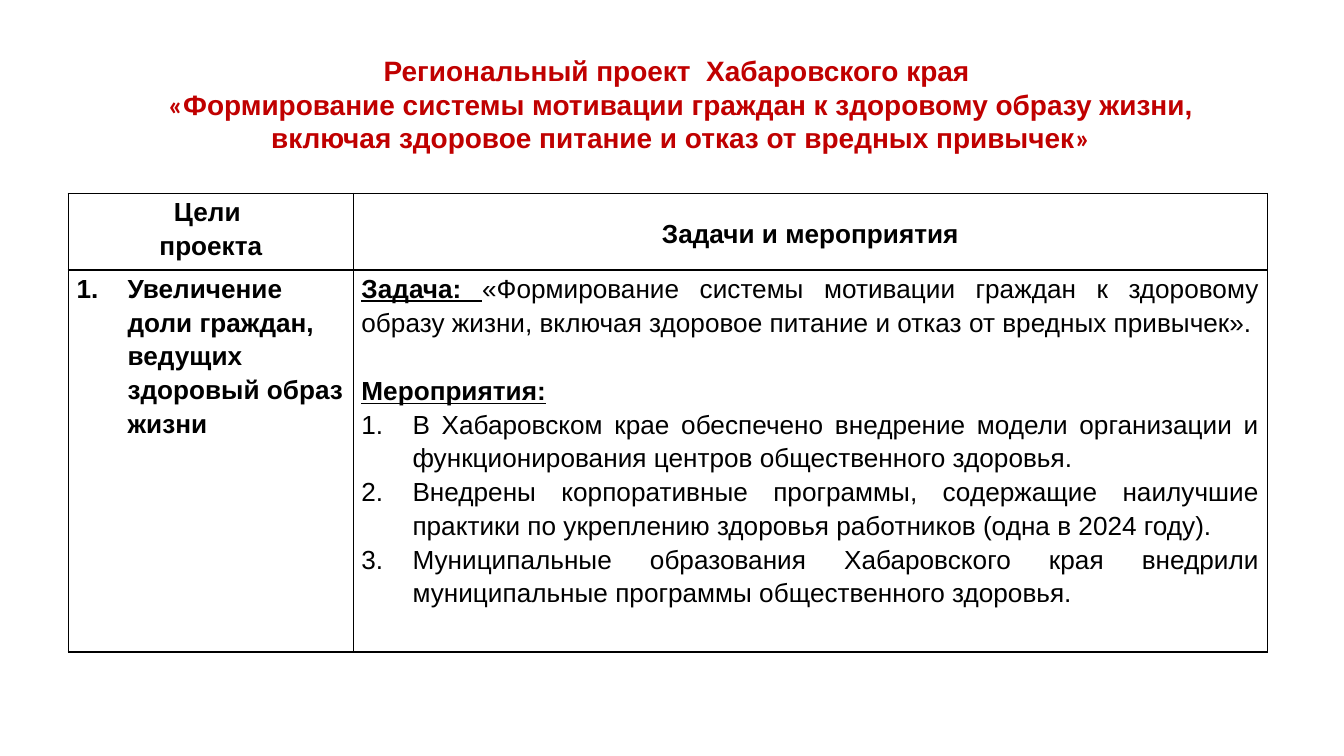
from lxml import etree
from pptx import Presentation, util as u
from pptx.dml.color import RGBColor
from pptx.enum import text
from pptx.oxml.ns import qn

COLORS = {"title": "C00000", "ink": "000000", "paper": "FFFFFF"}
CENTER, JUSTIFY, LEFT = text.PP_ALIGN.CENTER, text.PP_ALIGN.JUSTIFY, text.PP_ALIGN.LEFT
TOP, MIDDLE = text.MSO_ANCHOR.TOP, text.MSO_ANCHOR.MIDDLE


class SlideBuilder:
    """Holds the text style and the current slide."""
    font = "Arial"
    body_size = 14
    title_size = 15

    def __init__(self, slide):
        self.slide = slide

    def color(self, name):
        return RGBColor.from_string(COLORS[name])

    def style(self, span, size, color, bold=False, underline=False, font=None):
        span.font.name = font or self.font
        span.font.size = u.Pt(size)
        span.font.color.rgb = self.color(color)
        span.font.bold = bold
        span.font.underline = underline

    def number(self, para):
        """Hanging indent with automatic 1. 2. 3. numbering."""
        props = para._p.get_or_add_pPr()
        props.set("marL", str(u.Inches(0.38)))
        props.set("indent", str(u.Inches(-0.38)))
        etree.SubElement(props, qn("a:buFont"), typeface="+mj-lt")
        etree.SubElement(props, qn("a:buAutoNum"), type="arabicPeriod")

    def title(self, left, top, width, height, lines):
        """Each line is a list of (words, font) spans."""
        box = self.slide.shapes.add_textbox(*map(u.Inches, (left, top, width, height)))
        frame = box.text_frame
        frame.word_wrap = True
        frame.auto_size = text.MSO_AUTO_SIZE.SHAPE_TO_FIT_TEXT
        frame.vertical_anchor = MIDDLE
        frame.margin_left = frame.margin_right = u.Inches(0.07)
        frame.margin_top = frame.margin_bottom = u.Inches(0.04)
        for index, line in enumerate(lines):
            para = frame.add_paragraph() if index else frame.paragraphs[0]
            para.alignment = CENTER
            for words, font in line:
                span = para.add_run()
                span.text = words
                self.style(span, self.title_size, "title", bold=True, font=font)

    def table(self, left, top, widths, heights):
        frame = self.slide.shapes.add_table(
            len(heights), len(widths),
            *map(u.Inches, (left, top, sum(widths), sum(heights))))
        table = frame.table
        table.first_row = table.horz_banding = False
        for column, width in zip(table.columns, widths):
            column.width = u.Inches(width)
        for row, height in zip(table.rows, heights):
            row.height = u.Inches(height)
        for cell in table.iter_cells():
            self.border(cell)
            cell.fill.solid()
            cell.fill.fore_color.rgb = self.color("paper")
        return table

    def border(self, cell):
        props = cell._tc.get_or_add_tcPr()
        for side in ("lnL", "lnR", "lnT", "lnB"):
            line = etree.SubElement(props, qn(f"a:{side}"), w=str(u.Pt(1)))
            fill = etree.SubElement(line, qn("a:solidFill"))
            etree.SubElement(fill, qn("a:srgbClr"), val=COLORS["ink"])

    def fill_cell(self, cell, paras, align, anchor=TOP):
        """Each paragraph is (spans, numbered, space before); a span is (words, bold, underline)."""
        cell.margin_left = cell.margin_right = u.Inches(0.06)
        cell.margin_top = cell.margin_bottom = 0
        cell.vertical_anchor = anchor
        frame = cell.text_frame
        for index, (spans, numbered, before) in enumerate(paras):
            para = frame.add_paragraph() if index else frame.paragraphs[0]
            para.alignment = align
            para.line_spacing = 1.15
            if before:
                para.space_before = u.Pt(before)
            if numbered:
                self.number(para)
            for words, bold, underline in spans:
                span = para.add_run()
                span.text = words
                self.style(span, self.body_size, "ink", bold, underline)


def bold(words, numbered=False):
    return [(words, True, False)], numbered, 0


def main():
    # Widescreen page, 16:9
    deck = Presentation()
    deck.slide_width = u.Inches(10)
    deck.slide_height = deck.slide_width * 9 // 16
    page = SlideBuilder(deck.slides.add_slide(deck.slide_layouts[6]))

    # Goals and activities
    table = page.table(0.51, 1.44, widths=(2.12, 6.8), heights=(0.57, 2.84))
    page.fill_cell(table.cell(0, 0), [bold("Цели "), bold("проекта")], CENTER)
    page.fill_cell(table.cell(0, 1), [bold("Задачи и мероприятия")], CENTER, MIDDLE)
    page.fill_cell(table.cell(1, 0), [
        bold("Увеличение доли граждан, ведущих здоровый образ жизни", numbered=True)], LEFT)

    task = [("Задача: ", True, True),
            ("«Формирование системы мотивации граждан к здоровому образу жизни, "
             "включая здоровое питание и отказ от вредных привычек».", False, False)]
    activities = (
        "В Хабаровском крае обеспечено внедрение модели организации и "
        "функционирования центров общественного здоровья.",
        "Внедрены корпоративные программы, содержащие наилучшие практики "
        "по укреплению здоровья работников (одна в 2024 году).",
        "Муниципальные образования Хабаровского края внедрили "
        "муниципальные программы общественного здоровья.",
    )
    page.fill_cell(table.cell(1, 1), [
        (task, False, 0),
        ([("Мероприятия:", True, True)], False, 18.5),
        *(([(words, False, False)], True, 0) for words in activities),
    ], JUSTIFY)

    # Project title
    page.title(1.05, 0.36, 8.03, 0.83, [
        [("Региональный проект  Хабаровского края ", "Arial")],
        [("«", "Calibri"),
         ("Формирование системы мотивации граждан к здоровому образу жизни, "
          "включая здоровое питание и отказ от вредных привычек", "Arial"),
         ("»", "Calibri")],
    ])
    deck.save("out.pptx")


if __name__ == "__main__":
    main()
